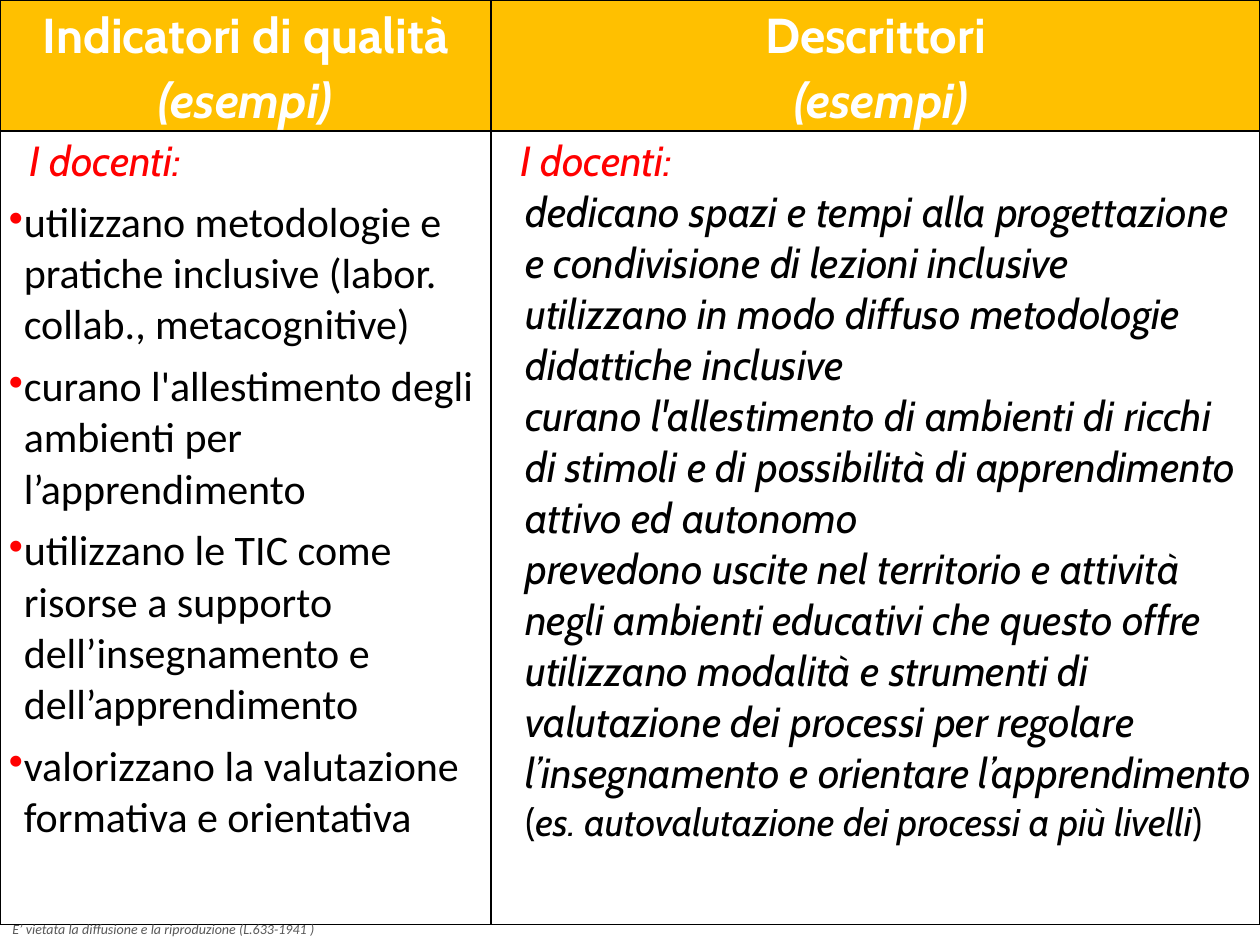
import pptx
import pptx.util
import pptx.dml.color
import pptx.enum.text
import pptx.oxml
import pptx.oxml.ns
from pptx.util import Cm, Pt

COLORS = {"header": "FFC000", "white": "FFFFFF", "black": "000000",
          "red": "FF0000", "footer": "595959"}

ALIGN = pptx.enum.text.PP_ALIGN

STYLES = {
    "heading": dict(font="Cabin", size=28, color="white", bold=True, align=ALIGN.CENTER, spacing=1.1),
    "subject": dict(font="Cabin", size=24, color="red", align=ALIGN.JUSTIFY, spacing=1.1, left=0.41),
    "indicator": dict(font="Calibri", size=24, color="black", left=0.3, bullet=True, before=6),
    "descriptor": dict(font="Cabin", size=24, color="black", left=0.51),
    "example": dict(font="Cabin", size=22, color="black", left=0.51),
    "footer": dict(font="Calibri", size=8, color="footer"),
}

SUBJECT = ("subject", [("I docenti:", True)])

INDICATORS = [
    "utilizzano metodologie e pratiche inclusive (labor. collab., metacognitive)",
    "curano l'allestimento degli ambienti per l’apprendimento",
    "utilizzano le TIC come risorse a supporto dell’insegnamento e dell’apprendimento",
    "valorizzano la valutazione formativa e orientativa",
]

DESCRIPTORS = [
    "dedicano spazi e tempi alla progettazione e condivisione di lezioni inclusive",
    "utilizzano in modo diffuso metodologie didattiche inclusive",
    "curano l'allestimento di ambienti di ricchi di stimoli e di possibilità di apprendimento attivo ed autonomo",
    "prevedono uscite nel territorio e attività negli ambienti educativi che questo offre",
    "utilizzano modalità e strumenti di valutazione dei processi per regolare l’insegnamento e orientare l’apprendimento",
]

EXAMPLE = ("example", [("(", False), ("es. autovalutazione dei processi a più livelli", True), (")", False)])

ROWS = [
    [
        [("heading", [("Indicatori di qualità ", False), ("(esempi)", True)])],
        [("heading", [("Descrittori", False)]), ("heading", [(" ", False), ("(esempi)", True)])],
    ],
    [
        [SUBJECT] + [("indicator", [(text, False)]) for text in INDICATORS],
        [SUBJECT] + [("descriptor", [(text, True)]) for text in DESCRIPTORS] + [EXAMPLE],
    ],
]

FOOTER = [("footer", [("E’ vietata la diffusione e la riproduzione (L.633-1941 )", True)])]

COLUMN_WIDTHS = [9.9, 15.5]
ROW_HEIGHTS = [2.63, 16]


def rgb(name):
    return pptx.dml.color.RGBColor.from_string(COLORS[name])


def add_bullet(properties):
    color = pptx.oxml.ns.qn("a:buClr")
    bullet_color = properties.makeelement(color, {})
    bullet_color.append(properties.makeelement(pptx.oxml.ns.qn("a:srgbClr"), {"val": COLORS["red"]}))
    properties.append(bullet_color)
    properties.append(properties.makeelement(pptx.oxml.ns.qn("a:buChar"), {"char": "•"}))


def write(frame, paragraphs):
    for index, (style_name, pieces) in enumerate(paragraphs):
        style = STYLES[style_name]
        paragraph = frame.paragraphs[0] if index == 0 else frame.add_paragraph()
        paragraph.alignment = style.get("align", ALIGN.LEFT)
        paragraph.line_spacing = style.get("spacing", 1.0)
        paragraph.space_before = Pt(style.get("before", 0))
        properties = paragraph._p.get_or_add_pPr()
        left = Cm(style.get("left", 0))
        properties.set("marL", str(left))
        properties.set("indent", str(-left if style.get("bullet") else 0))
        if style.get("bullet"):
            add_bullet(properties)
        for text, italic in pieces:
            run = paragraph.add_run()
            run.text = text
            run.font.name = style["font"]
            run.font.size = Pt(style["size"])
            run.font.color.rgb = rgb(style["color"])
            run.font.bold = style.get("bold", False)
            run.font.italic = italic


def add_borders(cell):
    properties = cell._tc.get_or_add_tcPr()
    for side in ("L", "R", "T", "B"):
        properties.append(pptx.oxml.parse_xml(
            f'<a:ln{side} {pptx.oxml.ns.nsdecls("a")} w="{Pt(1)}"><a:solidFill>'
            f'<a:srgbClr val="{COLORS["black"]}"/></a:solidFill></a:ln{side}>'))


presentation = pptx.Presentation()
presentation.slide_width, presentation.slide_height = Cm(25.4), Cm(19.05)
slide = presentation.slides.add_slide(presentation.slide_layouts[6])

quality = slide.shapes.add_table(
    len(ROWS), len(COLUMN_WIDTHS), 0, 0, Cm(sum(COLUMN_WIDTHS)), Cm(sum(ROW_HEIGHTS))).table
quality.horz_banding = False
for column, width in zip(quality.columns, COLUMN_WIDTHS):
    column.width = Cm(width)
for row, height in zip(quality.rows, ROW_HEIGHTS):
    row.height = Cm(height)

for row_index, contents in enumerate(ROWS):
    for column_index, paragraphs in enumerate(contents):
        cell = quality.cell(row_index, column_index)
        cell.margin_left = cell.margin_right = Cm(0.18)
        cell.margin_top = cell.margin_bottom = 0
        is_header = row_index == 0
        cell.vertical_anchor = (pptx.enum.text.MSO_ANCHOR.MIDDLE if is_header
                                else pptx.enum.text.MSO_ANCHOR.TOP)
        add_borders(cell)
        cell.fill.solid()
        cell.fill.fore_color.rgb = rgb("header" if is_header else "white")
        write(cell.text_frame, paragraphs)

notice = slide.shapes.add_textbox(0, Cm(18.44), Cm(6.7), Cm(0.61)).text_frame
notice.word_wrap = True
notice.auto_size = pptx.enum.text.MSO_AUTO_SIZE.SHAPE_TO_FIT_TEXT
write(notice, FOOTER)

presentation.save("out.pptx")
